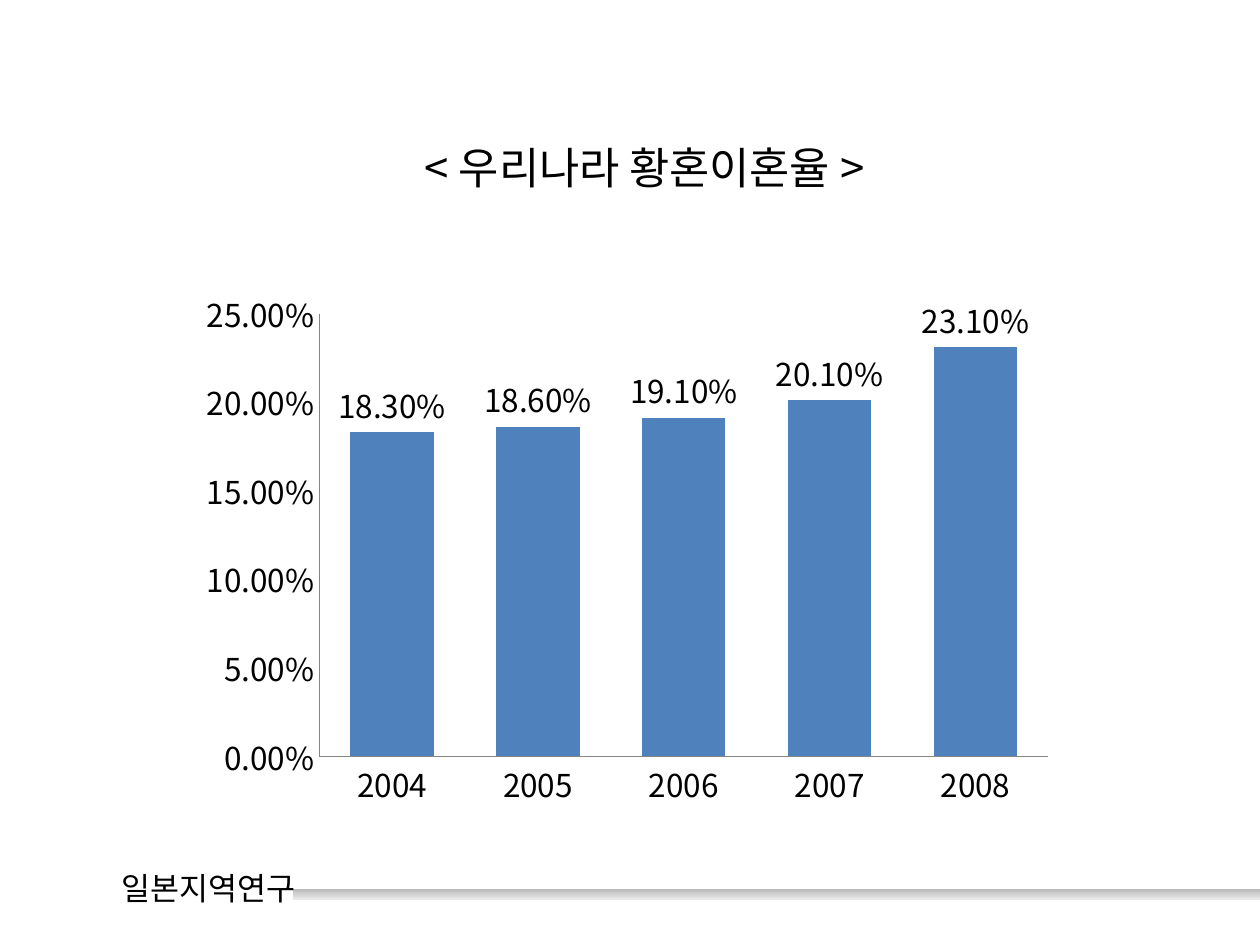
from lxml import etree
from pptx import Presentation
from pptx.chart.data import CategoryChartData
from pptx.dml.color import RGBColor
from pptx.enum.chart import XL_CHART_TYPE as ChartType
from pptx.enum.chart import XL_LABEL_POSITION as LabelPosition
from pptx.enum.chart import XL_TICK_MARK as TickMark
from pptx.enum.shapes import MSO_SHAPE as ShapeType
from pptx.enum.text import MSO_ANCHOR as Anchor
from pptx.enum.text import PP_ALIGN as Align
from pptx.oxml.ns import qn
from pptx.util import Cm, Pt

FONT = "Noto Sans CJK KR"
TITLE = "< 우리나라 황혼이혼율 >"
FOOTER = "일본지역연구"
DIVORCE_RATES = {"2004": 0.183, "2005": 0.186, "2006": 0.191, "2007": 0.201, "2008": 0.231}
BAR_GRADIENT = [(0, "B8B8B8"), (50, "D3D3D3"), (100, "E9E9E9")]
BLACK, BLUE, GRAY = "000000", "4F81BD", "868686"


def color(value):
    return RGBColor.from_string(value)


def place(shape, left, top, width, height):
    shape.left, shape.top = Cm(left), Cm(top)
    shape.width, shape.height = Cm(width), Cm(height)


def format_font(font, size):
    font.name, font.size, font.bold = FONT, Pt(size), False
    font.color.rgb = color(BLACK)


def write(shape, text, size=18, align=Align.LEFT, anchor=Anchor.MIDDLE):
    frame = shape.text_frame
    frame.word_wrap = True
    frame.vertical_anchor = anchor
    paragraph = frame.paragraphs[0]
    paragraph.alignment = align
    run = paragraph.add_run()
    run.text = text
    format_font(run.font, size)
    run_properties = run.font._element
    etree.SubElement(run_properties, qn("a:ea"), typeface=FONT)


def add_plain_shape(slide, kind, *box):
    shape = slide.shapes.add_shape(kind, *map(Cm, box))
    shape.shadow.inherit = False
    shape.fill.background()
    shape.line.fill.background()
    return shape


def fill_gradient(shape, stops):
    shape.fill.gradient()
    shape.fill.gradient_angle = 270
    stop_list = shape._element.spPr.find(qn("a:gradFill")).find(qn("a:gsLst"))
    for stop in list(stop_list):
        stop_list.remove(stop)
    for position, value in stops:
        stop = etree.SubElement(stop_list, qn("a:gs"), pos=str(position * 1000))
        etree.SubElement(stop, qn("a:srgbClr"), val=value)


def add_rate_chart(slide, *box):
    data = CategoryChartData(number_format="0.00%")
    data.categories = list(DIVORCE_RATES)
    data.add_series("Series 1", list(DIVORCE_RATES.values()))
    chart = slide.shapes.add_chart(ChartType.COLUMN_CLUSTERED, *map(Cm, box), data).chart
    chart.has_legend = chart.has_title = False
    format_font(chart.font, 18)

    for axis in (chart.category_axis, chart.value_axis):
        axis.has_major_gridlines = False
        axis.major_tick_mark = axis.minor_tick_mark = TickMark.NONE
        axis.format.line.color.rgb = color(GRAY)
        axis.format.line.width = Pt(0.75)
    value_axis = chart.value_axis
    value_axis.minimum_scale, value_axis.maximum_scale = 0, 0.25
    value_axis.major_unit = 0.05
    value_axis.tick_labels.number_format = "0.00%"
    value_axis.tick_labels.number_format_is_linked = False

    plot = chart.plots[0]
    plot.gap_width = 75
    plot.vary_by_categories = False
    series = plot.series[0]
    series.format.fill.solid()
    series.format.fill.fore_color.rgb = color(BLUE)
    labels = series.data_labels
    labels.show_value = True
    labels.position = LabelPosition.OUTSIDE_END
    labels.number_format = "0.00%"
    labels.number_format_is_linked = False
    format_font(labels.font, 18)


presentation = Presentation()
presentation.slide_width, presentation.slide_height = Cm(25.4), Cm(19.05)
slide = presentation.slides.add_slide(presentation.slide_layouts[5])

footer_bar = add_plain_shape(slide, ShapeType.RECTANGLE, 5.9, 17.93, 19.5, 0.2)
fill_gradient(footer_bar, BAR_GRADIENT)
footer_label = add_plain_shape(slide, ShapeType.ROUNDED_RECTANGLE, 1.9, 17.32, 4.6, 1.14)
write(footer_label, FOOTER, align=Align.CENTER)

add_rate_chart(slide, 3.81, 5.64, 17.68, 10.85)

title = slide.shapes.title
place(title, 8.31, 2.72, 10.8, 1.32)
write(title, TITLE, size=25, anchor=Anchor.TOP)

presentation.save("out.pptx")
